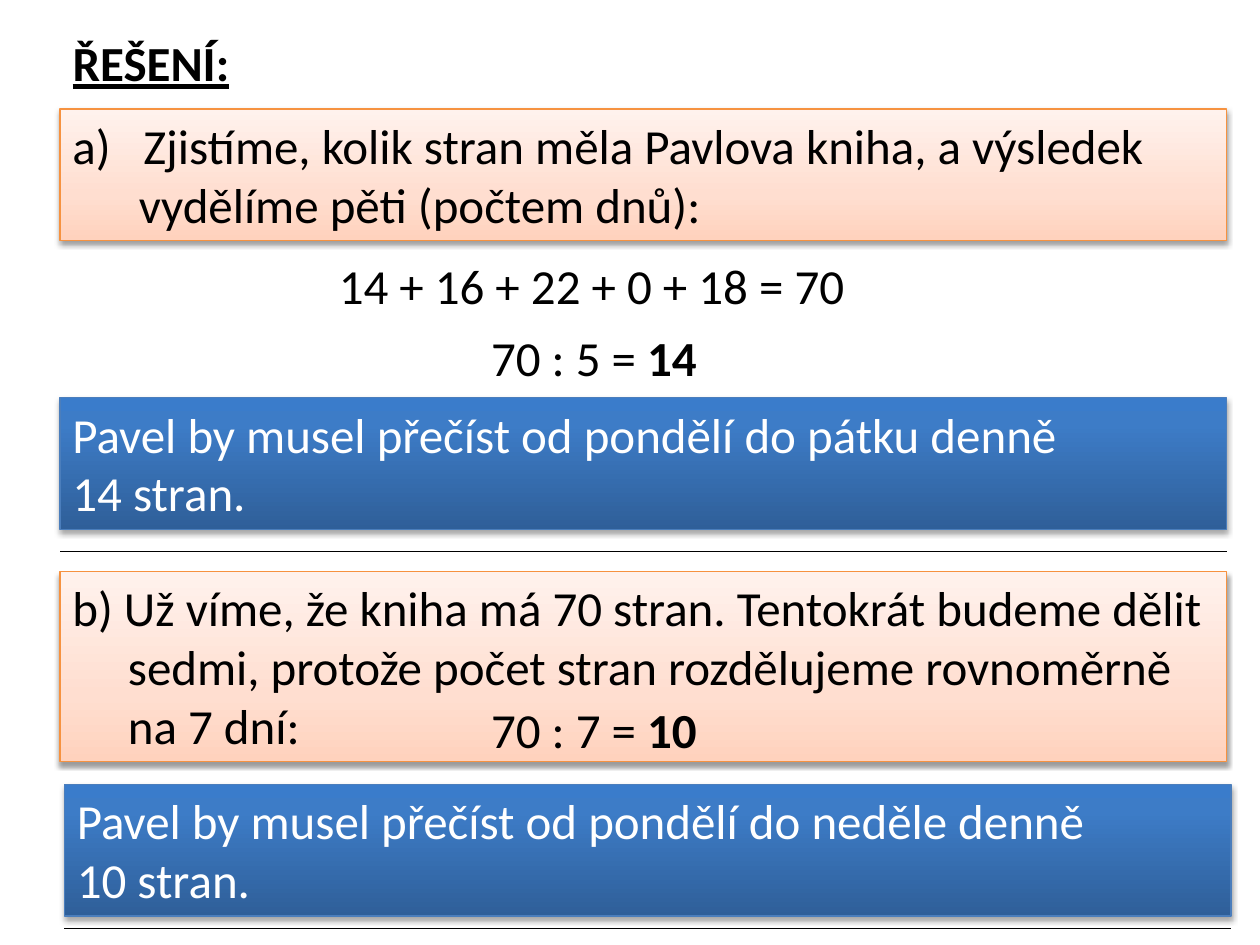
import pptx
import pptx.util
import pptx.dml.color
import pptx.enum.shapes
import pptx.enum.text
import pptx.oxml.ns
import pptx.oxml.xmlchemy

COLORS = {"text": "000000", "answer_text": "FFFFFF",
          "task_line": "F69240", "answer_line": "4B7EBC"}
STYLES = {
    "task": {"stops": [(0, "FFD2BD"), (35, "FFDED0"), (100, "FFF2ED")],
             "line": "task_line", "text": "text", "alpha": 38, "distance": 1.6},
    "answer": {"stops": [(0, "2F5F99"), (80, "3D7CC7"), (100, "3A7CCB")],
               "line": "answer_line", "text": "answer_text", "alpha": 35, "distance": 1.8},
}
LEFT, SHIFTED_LEFT, WIDTH = 1.21, 1.3, 23.52
TWO_LINES, THREE_LINES, ONE_LINE = 2.65, 3.84, 1.45


def rgb(name):
    return pptx.dml.color.RGBColor.from_string(COLORS[name])


def lengths(*centimetres):
    return [pptx.util.Cm(value) for value in centimetres]


def add_xml(parent, tag, **attributes):
    child = pptx.oxml.xmlchemy.OxmlElement(tag)
    for key, value in attributes.items():
        child.set(key, str(value))
    parent.append(child)
    return child


def add_run(paragraph, text, color="text", bold=None, underline=None):
    run = paragraph.add_run()
    run.text = text
    font = run.font
    font.name, font.size = "Calibri", pptx.util.Pt(28)
    font.bold, font.underline = bold, underline
    font.color.rgb = rgb(color)


def set_gradient(shape, stops):
    """Run the stops from the bottom edge to the top edge."""
    shape.fill.gradient()
    shape.fill.gradient_angle = 90
    stop_list = shape._element.spPr.find(".//" + pptx.oxml.ns.qn("a:gsLst"))
    for old_stop in list(stop_list):
        stop_list.remove(old_stop)
    for position, color in stops:
        stop = add_xml(stop_list, "a:gs", pos=position * 1000)
        add_xml(stop, "a:srgbClr", val=color)


def set_shadow(shape, alpha, distance):
    shape.shadow.inherit = False
    effects = shape._element.spPr.find(pptx.oxml.ns.qn("a:effectLst"))
    shadow = add_xml(effects, "a:outerShdw", blurRad=pptx.util.Pt(3.1),
                     dist=pptx.util.Pt(distance), dir=5400000, rotWithShape=0)
    color = add_xml(shadow, "a:srgbClr", val=COLORS["text"])
    add_xml(color, "a:alpha", val=alpha * 1000)


def indent(paragraph, left, first=0):
    properties = paragraph._p.get_or_add_pPr()
    properties.set("marL", str(pptx.util.Cm(left)))
    properties.set("indent", str(pptx.util.Cm(first)))
    return properties


def add_panel(slide, style_name, left, top, height, lines):
    """Add a gradient panel; lines are (text, left indent in cm) pairs."""
    style = STYLES[style_name]
    panel = slide.shapes.add_shape(pptx.enum.shapes.MSO_SHAPE.RECTANGLE,
                                   *lengths(left, top, WIDTH, height))
    set_gradient(panel, style["stops"])
    panel.line.color.rgb = rgb(style["line"])
    panel.line.width = pptx.util.Pt(0.75)
    set_shadow(panel, style["alpha"], style["distance"])
    frame = panel.text_frame
    frame.word_wrap = True
    frame.vertical_anchor = pptx.enum.text.MSO_ANCHOR.TOP
    for number, (text, left_indent) in enumerate(lines):
        paragraph = frame.add_paragraph() if number else frame.paragraphs[0]
        paragraph.alignment = pptx.enum.text.PP_ALIGN.LEFT
        indent(paragraph, left_indent)
        add_run(paragraph, text, style["text"])
    return panel


def add_equation(slide, left, top, width, calculation, result=None):
    box = slide.shapes.add_textbox(*lengths(left, top, width, ONE_LINE))
    box.text_frame.word_wrap = False
    paragraph = box.text_frame.paragraphs[0]
    add_run(paragraph, calculation)
    if result:
        add_run(paragraph, result, bold=True)


def add_divider(slide, left, top):
    divider = slide.shapes.add_connector(pptx.enum.shapes.MSO_CONNECTOR.STRAIGHT,
                                         *lengths(left, top, left + WIDTH, top))
    divider.line.color.rgb = rgb("text")
    divider.line.width = pptx.util.Pt(0.75)
    add_xml(divider._element.spPr, "a:effectLst")


def set_title(slide, text):
    title = slide.shapes.title
    title.left, title.top, title.width, title.height = lengths(LEFT, 0.53, 3.78, ONE_LINE)
    frame = title.text_frame
    frame.word_wrap = True
    frame.auto_size = pptx.enum.text.MSO_AUTO_SIZE.NONE
    frame.vertical_anchor = pptx.enum.text.MSO_ANCHOR.TOP
    frame.paragraphs[0].alignment = pptx.enum.text.PP_ALIGN.LEFT
    add_run(frame.paragraphs[0], text, bold=True, underline=True)


def main():
    deck = pptx.Presentation()
    deck.slide_width, deck.slide_height = lengths(25.4, 19.05)
    slide = deck.slides.add_slide(deck.slide_layouts[5])
    set_title(slide, "ŘEŠENÍ:")

    task_a = add_panel(slide, "task", LEFT, 2.2, TWO_LINES, [
        ("Zjistíme, kolik stran měla Pavlova kniha, a výsledek", 0),
        ("vydělíme pěti (počtem dnů):", 1.34)])
    lettered = indent(task_a.text_frame.paragraphs[0], 1.43, -1.43)
    add_xml(lettered, "a:buFont", typeface="+mj-lt")
    add_xml(lettered, "a:buAutoNum", type="alphaLcParenR")
    add_equation(slide, 6.58, 5.03, 10.87, "14 + 16 + 22 + 0 + 18 = 70")
    add_equation(slide, 9.65, 6.48, 4.72, "70 : 5 = ", "14")
    add_panel(slide, "answer", LEFT, 8.02, TWO_LINES, [
        ("Pavel by musel přečíst od pondělí do pátku denně", 0),
        ("14 stran.", 0)])
    add_divider(slide, LEFT, 11.12)

    add_panel(slide, "task", LEFT, 11.52, THREE_LINES, [
        ("b) Už víme, že kniha má 70 stran. Tentokrát budeme dělit", 0),
        ("sedmi, protože počet stran rozdělujeme rovnoměrně", 1.12),
        ("na 7 dní:", 1.12)])
    add_equation(slide, 9.65, 13.97, 4.72, "70 : 7 = ", "10")
    add_panel(slide, "answer", SHIFTED_LEFT, 15.82, TWO_LINES, [
        ("Pavel by musel přečíst od pondělí do neděle denně", 0),
        ("10 stran.", 0)])
    add_divider(slide, SHIFTED_LEFT, 18.72)
    deck.save("out.pptx")


if __name__ == "__main__":
    main()
